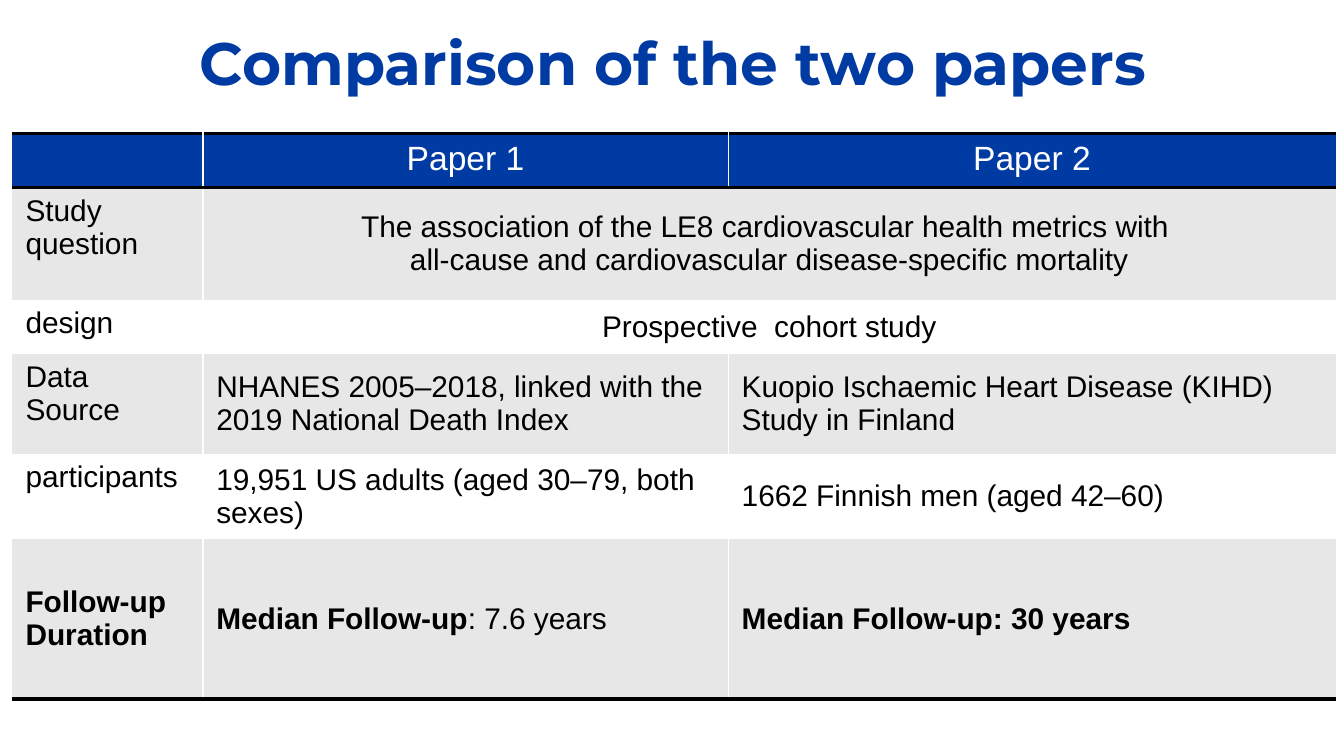
from pptx import Presentation
from pptx.dml.color import RGBColor
from pptx.enum.text import MSO_ANCHOR, PP_ALIGN
from pptx.oxml import parse_xml
from pptx.oxml.ns import nsdecls
from pptx.util import Pt

CENTER, LEFT = PP_ALIGN.CENTER, PP_ALIGN.LEFT
TOP, MIDDLE = MSO_ANCHOR.TOP, MSO_ANCHOR.MIDDLE
COLORS = {"blue": "003BA3", "grey": "E7E7E7", "white": "FFFFFF", "black": "000000"}

# Content: a cell is a list of paragraphs, a paragraph a list of (text, bold) runs
TITLE = "Comparison of the two papers"
ROWS = [
    [[[("", False)]], [[("Paper 1", False)]], [[("Paper 2", False)]]],
    [[[("Study question", False)]],
     [[("The association of the LE8 cardiovascular health metrics with ", False)],
      [("all-cause and cardiovascular disease-specific mortality", False)]]],
    [[[("design", False)]], [[("Prospective  cohort study", False)]]],
    [[[("Data Source", False)]],
     [[("NHANES 2005–2018, linked with the 2019 National Death Index", False)]],
     [[("Kuopio Ischaemic Heart Disease (KIHD) Study in Finland", False)]]],
    [[[("participants", False)]],
     [[("19,951 US adults (aged 30–79, both sexes)", False)]],
     [[("1662 Finnish men (aged 42–60)", False)]]],
    [[[("Follow-up Duration", True)]],
     [[("Median Follow-up", True), (": 7.6 years", False)]],
     [[("Median Follow-up: 30 years", True)]]],
]
COL_WIDTHS = [102.2, 281.5, 325.4]
ROW_HEIGHTS = [27.8, 60.5, 28.8, 53.5, 42.8, 85.7]
TABLE_LEFT, TABLE_TOP = 6.5, 71.6

TITLE_FONT = {"name": "Montserrat", "size": Pt(32), "bold": True}
HEAD_FONT = {"name": "Arial", "size": Pt(18)}
BODY_FONT = {"name": "Arial", "size": Pt(16)}


def add_run(p, text, fmt, color):
    r = p.add_run()
    r.text = text
    for key, value in fmt.items():
        setattr(r.font, key, value)
    r.font.color.rgb = RGBColor.from_string(COLORS[color])


def set_borders(cell, borders):
    """Draw the sides given as {side: (color, width)} and clear the others."""
    tc_pr = cell._tc.get_or_add_tcPr()
    for i, side in enumerate("LRTB"):
        color, width = borders.get(side, (None, 0))
        line = "<a:noFill/>"
        if color:
            line = f'<a:solidFill><a:srgbClr val="{COLORS[color]}"/></a:solidFill>'
        tc_pr.insert(i, parse_xml(
            f'<a:ln{side} {nsdecls("a")} w="{Pt(width)}">{line}</a:ln{side}>'))


prs = Presentation()
prs.slide_width, prs.slide_height = Pt(720), Pt(405)
s = prs.slides.add_slide(prs.slide_layouts[6])

# Title
sp = s.shapes.add_textbox(Pt(36.7), Pt(5.8), Pt(648), Pt(54.7))
tf = sp.text_frame
tf.word_wrap = True
tf.vertical_anchor = MIDDLE
p = tf.paragraphs[0]
p.alignment = CENTER
add_run(p, TITLE, TITLE_FONT, "blue")

# Table grid
n_rows, n_cols = len(ROWS), len(COL_WIDTHS)
table = s.shapes.add_table(
    n_rows, n_cols, Pt(TABLE_LEFT), Pt(TABLE_TOP),
    Pt(sum(COL_WIDTHS)), Pt(sum(ROW_HEIGHTS))).table
table.first_row = table.horz_banding = False
for col, width in zip(table.columns, COL_WIDTHS):
    col.width = Pt(width)
for row, height in zip(table.rows, ROW_HEIGHTS):
    row.height = Pt(height)

# Table cells
for i, row in enumerate(ROWS):
    header, last = i == 0, i == n_rows - 1
    merged = len(row) < n_cols
    if merged:
        table.cell(i, 1).merge(table.cell(i, 2))
    fill = "blue" if header else "grey" if i % 2 else "white"
    font, color = (HEAD_FONT, "white") if header else (BODY_FONT, "black")
    for j in range(n_cols):
        cell = table.cell(i, j)
        cell.fill.solid()
        cell.fill.fore_color.rgb = RGBColor.from_string(COLORS[fill])
        borders = {}
        if j > 0 and not (merged and j == 2):
            borders["L"] = ("white", 1)
        if j == 0 or (j == 1 and not merged):
            borders["R"] = ("white", 1)
        if header:
            borders["T"] = ("black", 2)
        if header or last:
            borders["B"] = ("black", 2)
        if i == 1:
            borders["T"] = ("black", 2)
        set_borders(cell, borders)
        if j >= len(row):
            continue
        cell.vertical_anchor = MIDDLE if last or (j and not header) else TOP
        for k, runs in enumerate(row[j]):
            tf = cell.text_frame
            p = tf.add_paragraph() if k else tf.paragraphs[0]
            p.alignment = CENTER if header or (merged and j) else LEFT
            for text, bold in runs:
                add_run(p, text, {**font, "bold": bold}, color)

prs.save("out.pptx")
